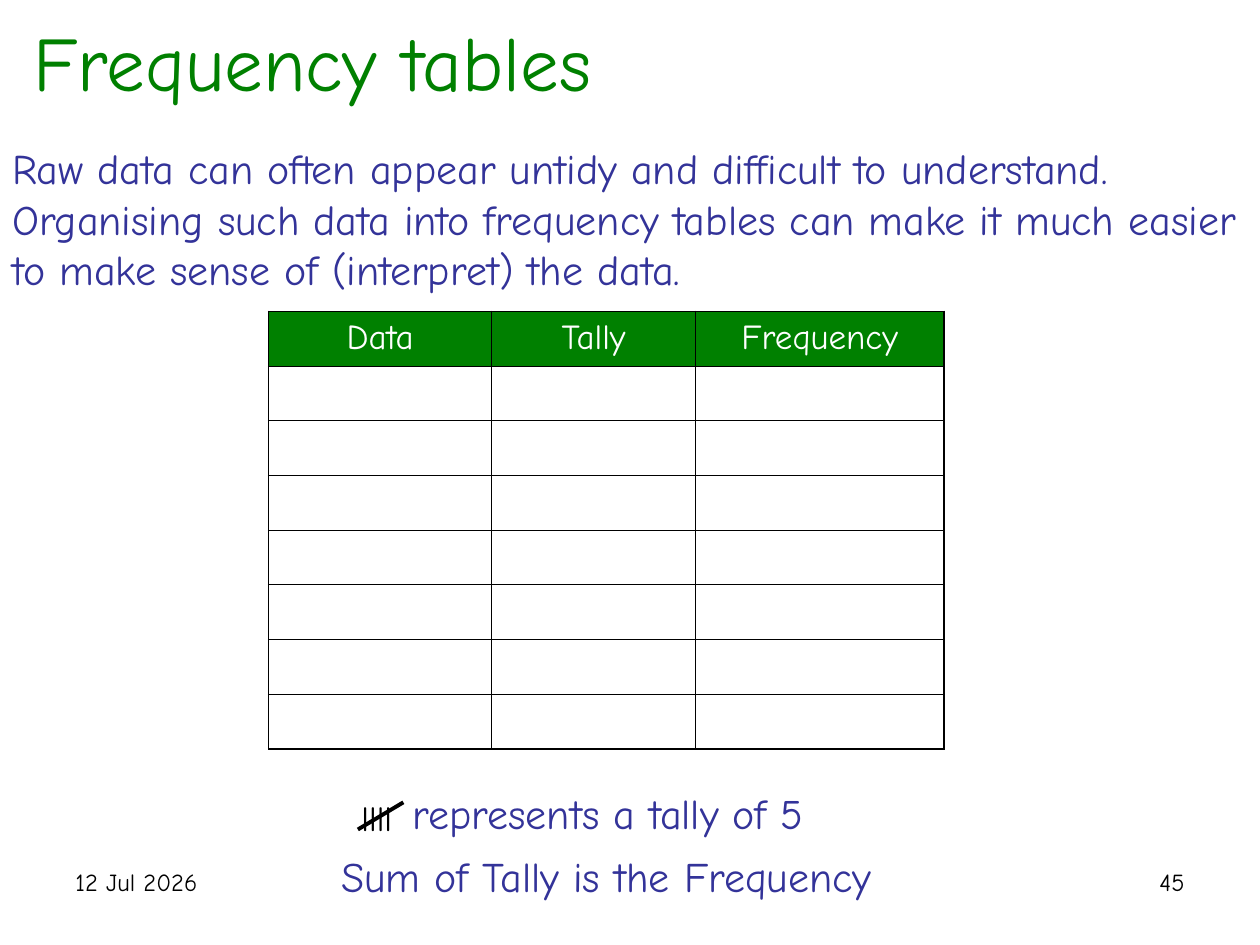
from lxml.etree import SubElement
from pptx import Presentation
from pptx.dml.color import RGBColor
from pptx.enum.shapes import MSO_CONNECTOR
from pptx.enum.text import MSO_ANCHOR, MSO_AUTO_SIZE, PP_ALIGN
from pptx.oxml.ns import qn
from pptx.util import Pt

BLACK, WHITE, GREEN, BLUE = "000000", "FFFFFF", "008000", "333399"


def color(code):
    return RGBColor.from_string(code)


class Page:
    font = "Comic Neue"
    thin, thick = 0.45, 1.08

    def __init__(self, slide):
        self.slide = slide

    def label(self, para, text, size, ink, align=PP_ALIGN.LEFT, before=0):
        para.alignment = align
        para.space_before = Pt(before)
        run = para.add_run()
        run.text = text
        run.font.size = Pt(size)
        run.font.name = self.font
        run.font.color.rgb = color(ink)

    def text(self, box, text, size, ink, align=PP_ALIGN.LEFT,
             before=0, wrap=True, grow=False, group=None):
        shape = (group or self.slide).shapes.add_textbox(*map(Pt, box))
        frame = shape.text_frame
        frame.word_wrap = wrap
        frame.auto_size = MSO_AUTO_SIZE.SHAPE_TO_FIT_TEXT if grow else MSO_AUTO_SIZE.NONE
        frame.vertical_anchor = MSO_ANCHOR.TOP
        self.label(frame.paragraphs[0], text, size, ink, align, before)

    def line(self, start, end, width, ink, group):
        line = group.shapes.add_connector(
            MSO_CONNECTOR.STRAIGHT, *map(Pt, (*start, *end)))
        line.line.width = Pt(width)
        line.line.color.rgb = color(ink)
        SubElement(line._element.spPr, qn("a:effectLst"))

    def border(self, cell, outer):
        props = cell._tc.get_or_add_tcPr()
        for side, edge in zip("LRTB", outer):
            width = self.thick if edge else self.thin
            line = SubElement(props, qn(f"a:ln{side}"), w=str(int(Pt(width))))
            fill = SubElement(line, qn("a:solidFill"))
            SubElement(fill, qn("a:srgbClr"), val=BLACK)

    def table(self, left, top, widths, height, rows, heads):
        cols = len(widths)
        frame = self.slide.shapes.add_table(
            rows, cols, Pt(left), Pt(top), Pt(sum(widths)), Pt(height * rows))
        table = frame.table
        table.first_row = table.horz_banding = False
        for col, width in zip(table.columns, widths):
            col.width = Pt(width)
        for r, row in enumerate(table.rows):
            row.height = Pt(height)
            for c, cell in enumerate(row.cells):
                self.border(cell, (c == 0, c == cols - 1, r == 0, r == rows - 1))
                if r:
                    cell.fill.background()
                    continue
                cell.fill.solid()
                cell.fill.fore_color.rgb = color(GREEN)
                self.label(cell.text_frame.paragraphs[0], heads[c],
                           20, WHITE, PP_ALIGN.CENTER)


def main():
    deck = Presentation()
    deck.slide_width, deck.slide_height = Pt(720), Pt(540)
    slide = deck.slides.add_slide(deck.slide_layouts[6])
    page = Page(slide)

    page.text((36, 492, 168, 37.5), "12 Jul 2026", 14, BLACK)
    page.text((516, 492, 168, 37.5), "45", 14, BLACK, PP_ALIGN.RIGHT)
    page.text((0, 78, 720, 93.6),
              "Raw data can often appear untidy and difficult to understand. "
              "Organising such data into frequency tables can make it much easier "
              "to make sense of (interpret) the data.",
              24, BLUE, before=15, grow=True)
    page.text((12, 4.5, 395.5, 42), "Frequency tables", 44, GREEN)
    page.table(153.5, 178, (127.5, 116.5, 142), 31.25, 8,
               ("Data", "Tally", "Frequency"))
    page.text((153.5, 482.5, 386, 36), "Sum of Tally is the Frequency",
              24, BLUE, PP_ALIGN.CENTER, before=15, grow=True)

    tally = slide.shapes.add_group_shape()
    page.text((199.5, 451.5, 36, 31.5), "llll", 20, BLACK,
              wrap=False, grow=True, group=tally)
    page.line((204.5, 474), (230.5, 458.5), 2.25, BLACK, tally)
    page.text((228.5, 446.5, 367, 36), "represents a tally of 5",
              24, BLUE, before=15, grow=True, group=tally)
    deck.save("out.pptx")


if __name__ == "__main__":
    main()
